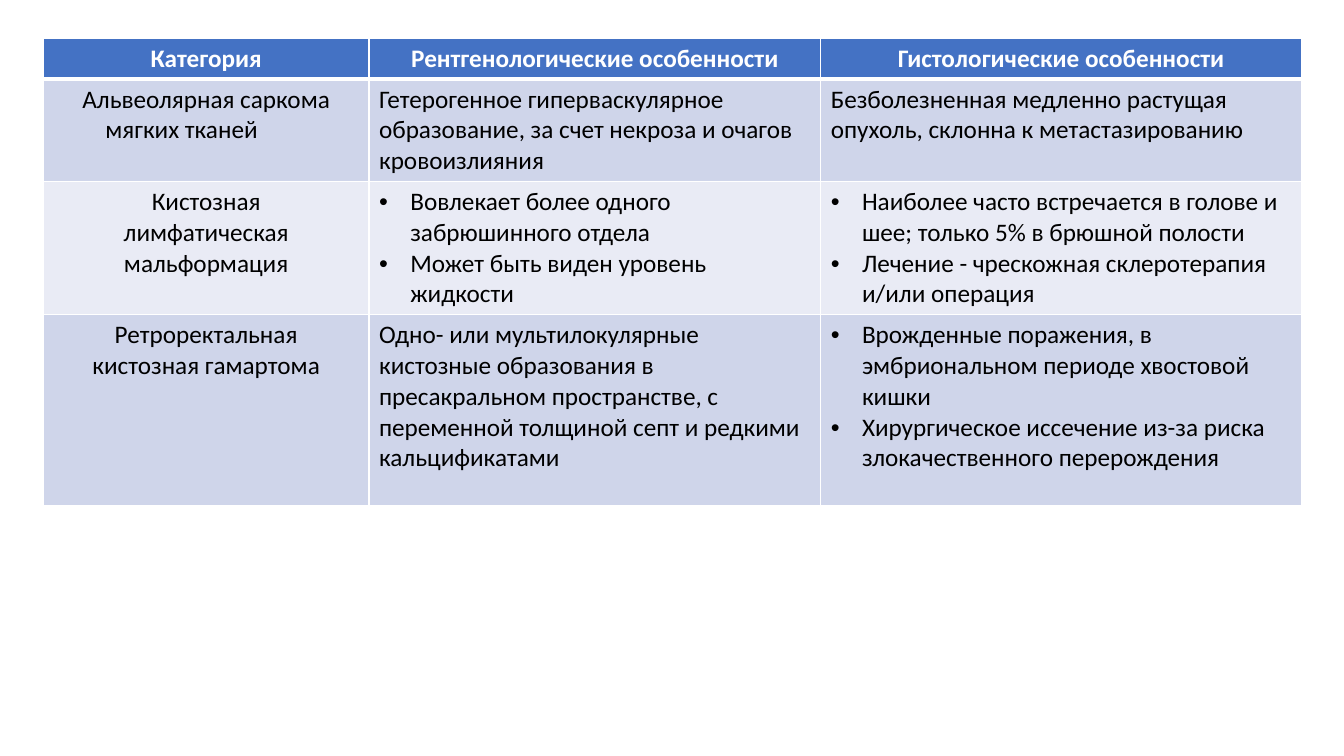
from lxml import etree
from pptx import Presentation
from pptx import util as u
from pptx.dml.color import RGBColor
from pptx.enum import text
from pptx.oxml.ns import qn

WHITE = RGBColor(0xFF, 0xFF, 0xFF)
BLACK = RGBColor(0x00, 0x00, 0x00)
HEADER_BLUE = RGBColor(0x44, 0x72, 0xC4)
BAND_DARK = RGBColor(0xCF, 0xD5, 0xEA)
BAND_LIGHT = RGBColor(0xE9, 0xEB, 0xF5)

COLUMN_WIDTHS = [3.23, 4.48, 4.77]
ROW_HEIGHTS = [0.39, 1.01, 1.3, 1.89]
INDENT = u.Inches(0.31)
BULLET = "• "

ROWS = [
    ["Категория", "Рентгенологические особенности", "Гистологические особенности"],
    [
        "Альвеолярная саркома мягких тканей\t",
        "Гетерогенное гиперваскулярное образование, за счет некроза и очагов кровоизлияния",
        "Безболезненная медленно растущая опухоль, склонна к метастазированию",
    ],
    [
        "Кистозная\nлимфатическая мальформация",
        "• Вовлекает более одного забрюшинного отдела\n"
        "• Может быть виден уровень жидкости",
        "• Наиболее часто встречается в голове и шее; только 5% в брюшной полости\n"
        "• Лечение - чрескожная склеротерапия и/или операция",
    ],
    [
        "Ретроректальная\nкистозная гамартома",
        "Одно- или мультилокулярные кистозные образования в пресакральном пространстве, "
        "с переменной толщиной септ и редкими кальцификатами",
        "• Врожденные поражения, в эмбриональном периоде хвостовой кишки\n"
        "• Хирургическое иссечение из-за риска злокачественного перерождения",
    ],
]


def add_border(cell, side, points):
    line = etree.SubElement(cell._tc.get_or_add_tcPr(), qn(f"a:ln{side}"), w=str(u.Pt(points)))
    fill = etree.SubElement(line, qn("a:solidFill"))
    etree.SubElement(fill, qn("a:srgbClr"), val=str(WHITE))


def add_bullet(para):
    properties = para._p.get_or_add_pPr()
    properties.set("marL", str(INDENT))
    properties.set("indent", str(-INDENT))
    etree.SubElement(properties, qn("a:buFont"), typeface="Arial")
    etree.SubElement(properties, qn("a:buChar"), char=BULLET.strip())


deck = Presentation()
deck.slide_width = u.Inches(13.33)
deck.slide_height = u.Inches(7.5)
page = deck.slides.add_slide(deck.slide_layouts[6])

table = page.shapes.add_table(
    len(ROWS), len(COLUMN_WIDTHS), u.Inches(0.43), u.Inches(0.38),
    u.Inches(sum(COLUMN_WIDTHS)), u.Inches(sum(ROW_HEIGHTS)),
).table
for column, width in zip(table.columns, COLUMN_WIDTHS):
    column.width = u.Inches(width)
for row, height in zip(table.rows, ROW_HEIGHTS):
    row.height = u.Inches(height)

for row_index, row_texts in enumerate(ROWS):
    is_header = row_index == 0
    band = BAND_DARK if row_index % 2 else BAND_LIGHT
    for column_index, cell_text in enumerate(row_texts):
        cell = table.cell(row_index, column_index)
        add_border(cell, "L", 1)
        add_border(cell, "R", 1)
        add_border(cell, "T", 3 if row_index == 1 else 1)
        add_border(cell, "B", 3 if is_header else 1)
        cell.fill.solid()
        cell.fill.fore_color.rgb = HEADER_BLUE if is_header else band
        cell.text_frame.text = cell_text.replace(BULLET, "")
        for para, line_text in zip(cell.text_frame.paragraphs, cell_text.split("\n")):
            if is_header or column_index == 0:
                para.alignment = text.PP_ALIGN.CENTER
            if line_text.startswith(BULLET):
                add_bullet(para)
            for span in para.runs:
                span.font.name = "Calibri"
                span.font.size = u.Pt(18)
                span.font.bold = is_header
                span.font.color.rgb = WHITE if is_header else BLACK

deck.save("out.pptx")
